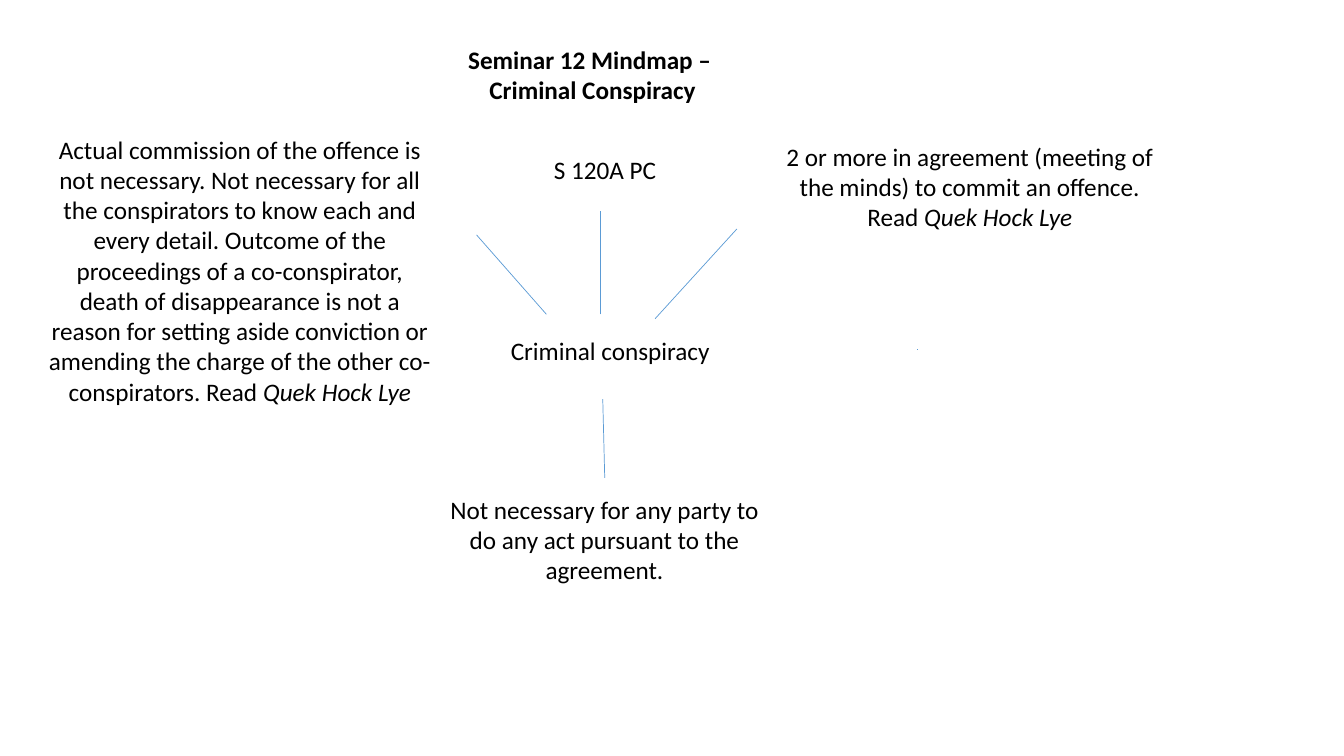
"""Build the criminal conspiracy mind map slide."""
import dataclasses

import lxml.etree
import pptx
import pptx.dml.color
import pptx.enum.shapes
import pptx.enum.text
import pptx.oxml.ns
import pptx.util


@dataclasses.dataclass(frozen=True)
class Theme:
    """Hold the colours, font and sizes of the mind map."""
    font: str = "Calibri"
    text_size: float = 18
    text_color: str = "000000"
    branch_color: str = "5B9BD5"
    branch_width: float = 0.5


class MindMap:
    """Draw notes and branches on one slide in one theme."""

    def __init__(self, slide, theme):
        """Keep the slide and its theme."""
        self.slide = slide
        self.theme = theme

    def note(self, left, top, width, height, *paragraphs):
        """Add centred text; each paragraph lists (text, style) runs."""
        box = self.slide.shapes.add_textbox(*map(pptx.util.Cm, (left, top, width, height)))
        frame = box.text_frame
        frame.word_wrap = True
        frame.auto_size = pptx.enum.text.MSO_AUTO_SIZE.SHAPE_TO_FIT_TEXT
        for index, runs in enumerate(paragraphs):
            paragraph = frame.add_paragraph() if index else frame.paragraphs[0]
            paragraph.alignment = pptx.enum.text.PP_ALIGN.CENTER
            for text, style in runs:
                run = paragraph.add_run()
                run.text = text
                run.font.name = self.theme.font
                run.font.size = pptx.util.Pt(self.theme.text_size)
                run.font.color.rgb = pptx.dml.color.RGBColor.from_string(self.theme.text_color)
                run.font.bold = style == "bold"
                run.font.italic = style == "italic"

    def branch(self, *ends):
        """Add a thin straight line given as x1, y1, x2, y2."""
        line = self.slide.shapes.add_connector(
            pptx.enum.shapes.MSO_CONNECTOR.STRAIGHT, *map(pptx.util.Cm, ends))
        line.line.color.rgb = pptx.dml.color.RGBColor.from_string(self.theme.branch_color)
        line.line.width = pptx.util.Pt(self.theme.branch_width)
        lxml.etree.SubElement(line._element.spPr, pptx.oxml.ns.qn("a:effectLst"))


def main():
    """Lay out the mind map and save it."""
    deck = pptx.Presentation()
    deck.slide_width = pptx.util.Cm(33.87)
    deck.slide_height = pptx.util.Cm(19.05)
    mind_map = MindMap(deck.slides.add_slide(deck.slide_layouts[6]), Theme())

    case_name = ("Quek Hock Lye", "italic")
    mind_map.note(11.15, 8.33, 8.46, 1.02, [("Criminal conspiracy", "plain")])
    mind_map.note(11.02, 3.76, 8.46, 1.02, [("S 120A PC", "plain")])
    mind_map.note(10.16, 0.99, 9.55, 1.8,
                  [("Seminar 12 Mindmap – ", "bold")], [("Criminal Conspiracy", "bold")])
    mind_map.note(19.46, 3.43, 9.96, 2.57, [
        ("2 or more in agreement (meeting of the minds) to commit an offence. Read ", "plain"),
        case_name])
    mind_map.note(0.94, 3.25, 10.21, 7.19, [
        ("Actual commission of the offence is not necessary. Not necessary for all the "
         "conspirators to know each and every detail. Outcome of the proceedings of a "
         "co-conspirator, death of disappearance is not a reason for setting aside "
         "conviction or amending the charge of the other co-conspirators. Read ", "plain"),
        case_name])
    mind_map.note(10.74, 12.32, 8.99, 2.57, [
        ("Not necessary for any party to do any act pursuant to the agreement.", "plain")])

    for ends in (
        (13.77, 7.92, 12.01, 5.92),
        (15.14, 7.92, 15.14, 5.31),
        (16.51, 8.03, 18.57, 5.77),
        (15.24, 12.04, 15.19, 10.06),
        (23.11, 8.81, 23.14, 8.81),
    ):
        mind_map.branch(*ends)

    deck.save("out.pptx")


if __name__ == "__main__":
    main()
